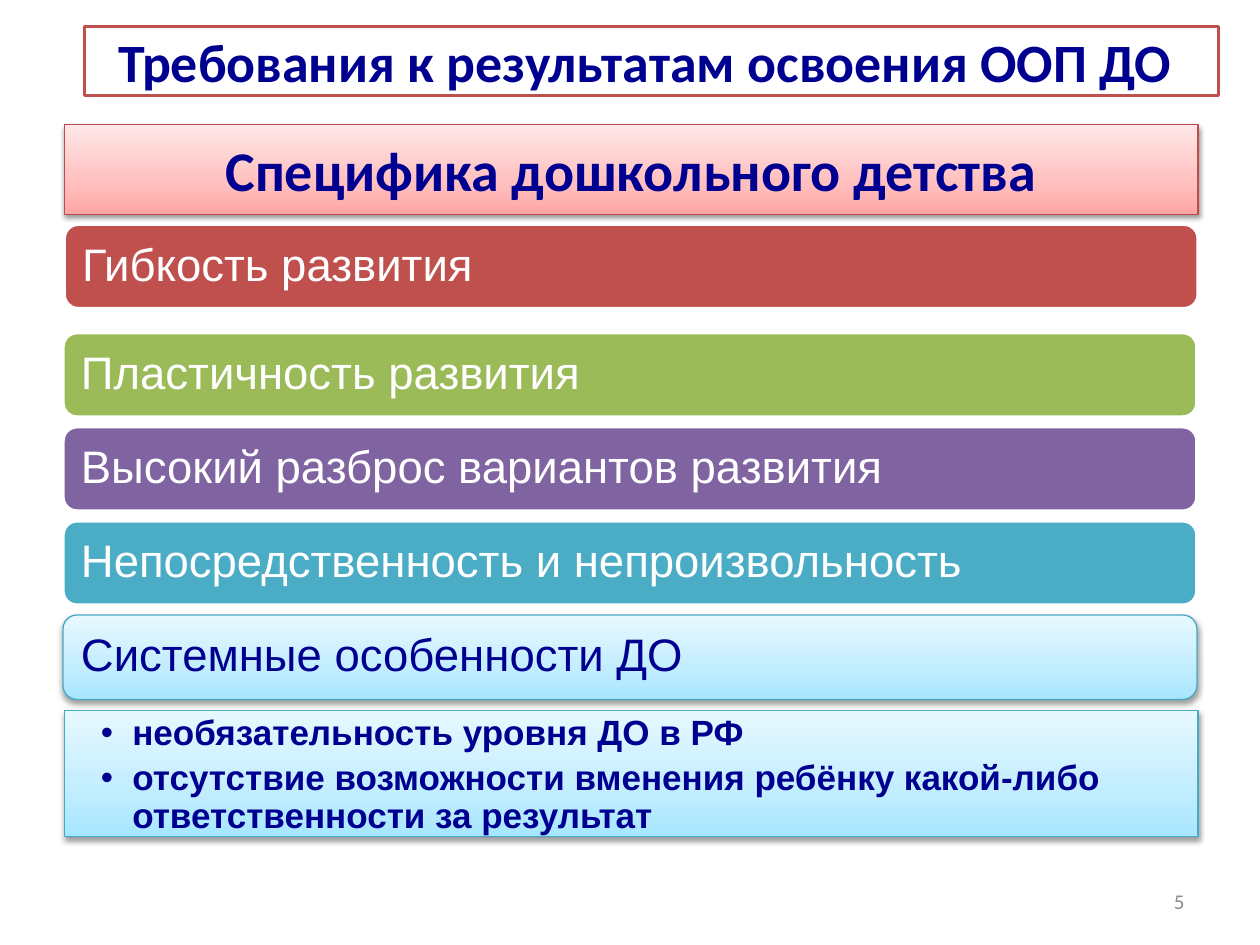
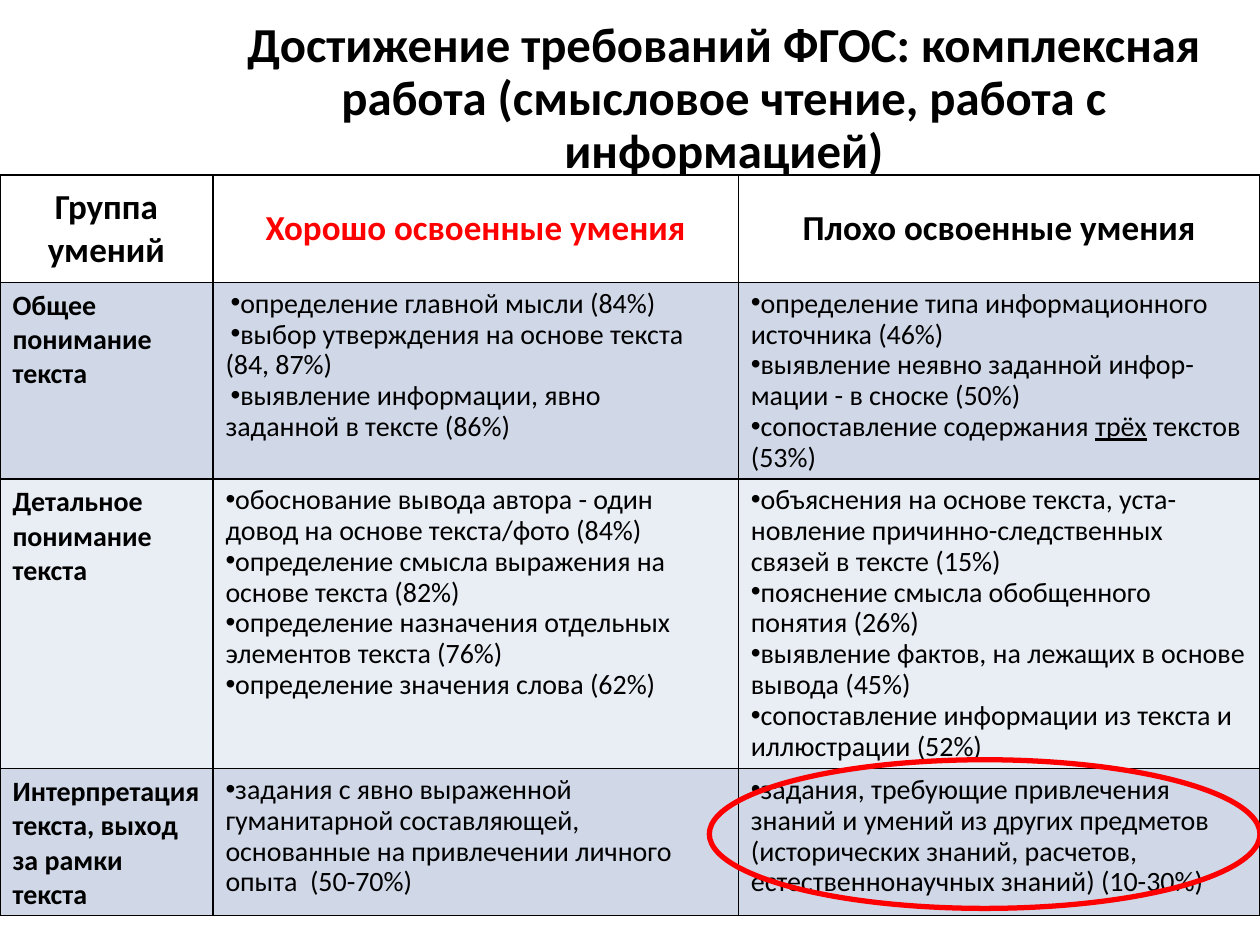
from copy import deepcopy
from pptx import Presentation
from pptx.dml.color import RGBColor
from pptx.enum.shapes import MSO_SHAPE as Shape
from pptx.enum.text import MSO_ANCHOR as Anchor, PP_ALIGN as Align
from pptx.oxml import parse_xml
from pptx.oxml.ns import nsdecls, qn
from pptx.util import Inches, Pt

NAVY, BLACK, WHITE, RED = "000090", "000000", "FFFFFF", "FF0000"
BRICK, GREY = "C0504D", "8C8C8C"
PINK_SHADES = ("FFA6A5", "FFC0BF", "FFE7E7")
BLUE_SHADES = ("A7E6FF", "C1EDFF", "E7F8FF")
PINK_EDGE, BLUE_EDGE = "BF4C48", "46AAC5"
BAND_DARK, BAND_LIGHT = "D0D8E8", "E9EDF4"

BARS = [
    ("Пластичность развития", "9BBB59"),
    ("Высокий разброс вариантов развития", "8064A2"),
    ("Непосредственность и непроизвольность", "4BACC6"),
]
SYSTEM_FEATURES = [
    "необязательность уровня ДО в РФ",
    "отсутствие возможности вменения ребёнку какой-либо ответственности за результат",
]
HEADINGS = [
    ("Группа умений", BLACK),
    ("Хорошо освоенные умения", RED),
    ("Плохо освоенные умения", BLACK),
]
SKILLS = [
    ("Общее понимание текста",
     ["определение главной мысли (84%)",
      "выбор утверждения на основе текста (84, 87%)",
      "выявление информации, явно  заданной в тексте (86%)"],
     ["определение типа информационного источника (46%)",
      "выявление неявно заданной инфор-мации - в сноске (50%)",
      "сопоставление содержания |трёх| текстов (53%)"]),
    ("Детальное понимание текста",
     ["обоснование вывода автора - один довод на основе текста/фото (84%)",
      "определение смысла выражения на основе текста (82%)",
      "определение назначения отдельных элементов текста (76%)",
      "определение значения слова (62%)"],
     ["объяснения на основе текста, уста-новление причинно-следственных связей в тексте (15%)",
      "пояснение смысла обобщенного понятия (26%)",
      "выявление фактов, на лежащих в основе вывода (45%)",
      "сопоставление информации из текста и иллюстрации (52%)"]),
    ("Интерпретация текста, выход за рамки текста",
     ["задания с явно выраженной гуманитарной составляющей, "
      "основанные на привлечении личного опыта  (50-70%)"],
     ["задания, требующие привлечения знаний и умений из других предметов "
      "(исторических знаний, расчетов, естественнонаучных знаний) (10-30%)"]),
]


def color(value):
    """Turn a hex string into a colour."""
    return RGBColor.from_string(value)


def write(frame, lines, size, shade, font="Calibri", bold=False, align=Align.LEFT, spacing=1.0):
    """Fill a text frame; text between vertical bars is underlined."""
    frame.word_wrap = True
    frame.text = "\n".join(line.replace("|", "") for line in lines)
    for para, line in zip(frame.paragraphs, lines):
        para.alignment = align
        para.line_spacing = spacing
        pieces = line.split("|")
        para.runs[0].text = pieces[0]
        for piece in pieces[1:]:
            para.add_run().text = piece
        for index, span in enumerate(para.runs):
            span.font.name = font
            span.font.size = Pt(size)
            span.font.bold = bold
            span.font.color.rgb = color(shade)
            if index % 2:
                span.font.underline = True


def bullet(para, margin, indent):
    """Give a paragraph a round bullet with its indents."""
    props = para._p.get_or_add_pPr()
    props.set("marL", str(Inches(margin)))
    props.set("indent", str(Inches(indent)))
    props.append(parse_xml(f'<a:buFont {nsdecls("a")} typeface="Arial"/>'))
    props.append(parse_xml(f'<a:buChar {nsdecls("a")} char="•"/>'))


def add_label(page, place, text, size, shade, **style):
    """Add a vertically centred text box."""
    box = page.shapes.add_textbox(*map(Inches, place))
    box.text_frame.vertical_anchor = Anchor.MIDDLE
    write(box.text_frame, [text], size, shade, **style)


def add_block(page, kind, place, fill, edge, width):
    """Add a flat outlined shape; no fill colour leaves it open."""
    block = page.shapes.add_shape(kind, *map(Inches, place))
    block.shadow.inherit = False
    if fill:
        block.fill.solid()
        block.fill.fore_color.rgb = color(fill)
    else:
        block.fill.background()
    block.line.color.rgb = color(edge)
    block.line.width = Pt(width)
    return block


def add_glossy_block(page, kind, place, shades, edge):
    """Add a shape with an upward gradient and a soft shadow below."""
    block = add_block(page, kind, place, WHITE, edge, 0.75)
    block.fill.gradient()
    block.fill.gradient_angle = 90
    props = block._element.spPr
    stop_list = props.find(qn("a:gradFill")).find(qn("a:gsLst"))
    stop_list.append(deepcopy(stop_list[0]))
    for stop, shade, position in zip(block.fill.gradient_stops, shades, (0, 0.35, 1)):
        stop.color.rgb = color(shade)
        stop.position = position
    props.find(qn("a:effectLst")).append(parse_xml(
        f'<a:outerShdw {nsdecls("a")} blurRad="{Pt(3.1)}" dist="{Pt(1.6)}" dir="5400000" '
        'rotWithShape="0"><a:srgbClr val="000000"><a:alpha val="38000"/></a:srgbClr></a:outerShdw>'))
    return block


def write_bar(bar, text, shade):
    """Write the caption of a rounded bar."""
    bar.text_frame.margin_left = Inches(0.11)
    write(bar.text_frame, [text], 26, shade, font="Arial", spacing=0.9)


def outline_cell(cell):
    """Draw black borders around a table cell."""
    props = cell._tc.get_or_add_tcPr()
    for index, side in enumerate(("lnL", "lnR", "lnT", "lnB")):
        props.insert(index, parse_xml(
            f'<a:{side} {nsdecls("a")} w="{Pt(1)}"><a:solidFill>'
            f'<a:srgbClr val="{BLACK}"/></a:solidFill></a:{side}>'))


def add_skills_table(page):
    """Add the table of well and poorly mastered skills."""
    widths, heights = (1.69, 4.17, 4.14), (0.85, 1.56, 2.3, 1.14)
    place = (0, 1.39, sum(widths), sum(heights))
    table = page.shapes.add_table(len(heights), len(widths), *map(Inches, place)).table
    table.first_row = table.horz_banding = False
    for column, width in zip(table.columns, widths):
        column.width = Inches(width)
    for row, height in zip(table.rows, heights):
        row.height = Inches(height)
    for cell, (heading, shade) in zip(table.rows[0].cells, HEADINGS):
        write(cell.text_frame, [heading], 20, shade, bold=True, align=Align.CENTER)
        cell.vertical_anchor = Anchor.MIDDLE
        cell.fill.background()
    for number, (group, *columns) in enumerate(SKILLS, 1):
        cells = list(table.rows[number].cells)
        write(cells[0].text_frame, [group], 16, BLACK, bold=True)
        for position, (cell, skills) in enumerate(zip(cells[1:], columns)):
            write(cell.text_frame, skills, 16, BLACK, spacing=0.9)
            indent = 0.04 if (number, position) == (1, 0) else -0.04
            for para in cell.text_frame.paragraphs:
                bullet(para, 0, indent)
        for cell in cells:
            cell.fill.solid()
            cell.fill.fore_color.rgb = color(BAND_DARK if number % 2 else BAND_LIGHT)
    for cell in table.iter_cells():
        outline_cell(cell)


def build_childhood_page(page):
    """Build the slide on the specifics of preschool childhood."""
    banner = add_glossy_block(page, Shape.RECTANGLE, (0.51, 0.99, 9, 0.71), PINK_SHADES, PINK_EDGE)
    write(banner.text_frame, ["Специфика дошкольного детства"], 32, NAVY, bold=True, align=Align.CENTER)
    add_label(page, (7.17, 6.95, 2.33, 0.4), "5", 12, GREY, align=Align.RIGHT)

    flexibility = add_block(page, Shape.ROUNDED_RECTANGLE, (0.51, 1.78, 9, 0.67), BRICK, WHITE, 2)
    write_bar(flexibility, "Гибкость развития", WHITE)
    first_top, step = 2.64, 0.747
    for index, (text, fill) in enumerate(BARS):
        place = (0.5, first_top + index * step, 9, 0.67)
        write_bar(add_block(page, Shape.ROUNDED_RECTANGLE, place, fill, WHITE, 2), text, WHITE)
    place = (0.5, first_top + len(BARS) * step, 9, 0.67)
    system = add_glossy_block(page, Shape.ROUNDED_RECTANGLE, place, BLUE_SHADES, BLUE_EDGE)
    write_bar(system, "Системные особенности ДО", NAVY)

    details = add_glossy_block(page, Shape.RECTANGLE, (0.51, 5.64, 9, 1), BLUE_SHADES, BLUE_EDGE)
    frame = details.text_frame
    frame.vertical_anchor = Anchor.TOP
    frame.margin_left, frame.margin_right = Inches(0.29), Inches(0.2)
    frame.margin_top = frame.margin_bottom = Inches(0.04)
    write(frame, SYSTEM_FEATURES, 20, NAVY, font="Arial", bold=True, spacing=0.9)
    for para in frame.paragraphs:
        para.space_after = Pt(4)
        bullet(para, 0.25, -0.25)

    title = add_block(page, Shape.RECTANGLE, (0.67, 0.21, 9, 0.55), WHITE, BRICK, 2)
    write(title.text_frame, ["Требования к результатам освоения ООП ДО "], 30.8, NAVY,
          bold=True, align=Align.CENTER)


def build_skills_page(page):
    """Build the slide on reading skills."""
    add_label(page, (1.77, 0.25, 7.95, 1.08),
              "Достижение требований ФГОС: комплексная работа (смысловое чтение, работа с информацией)",
              27.9, BLACK, bold=True, align=Align.CENTER, spacing=0.9)
    add_skills_table(page)
    add_block(page, Shape.OVAL, (5.63, 6.03, 4.37, 1.18), None, RED, 3)


def main():
    """Build and save the deck."""
    deck = Presentation()
    deck.slide_width, deck.slide_height = Inches(10), Inches(7.5)
    for build in (build_childhood_page, build_skills_page):
        build(deck.slides.add_slide(deck.slide_layouts[6]))
    deck.save("out.pptx")


if __name__ == "__main__":
    main()
